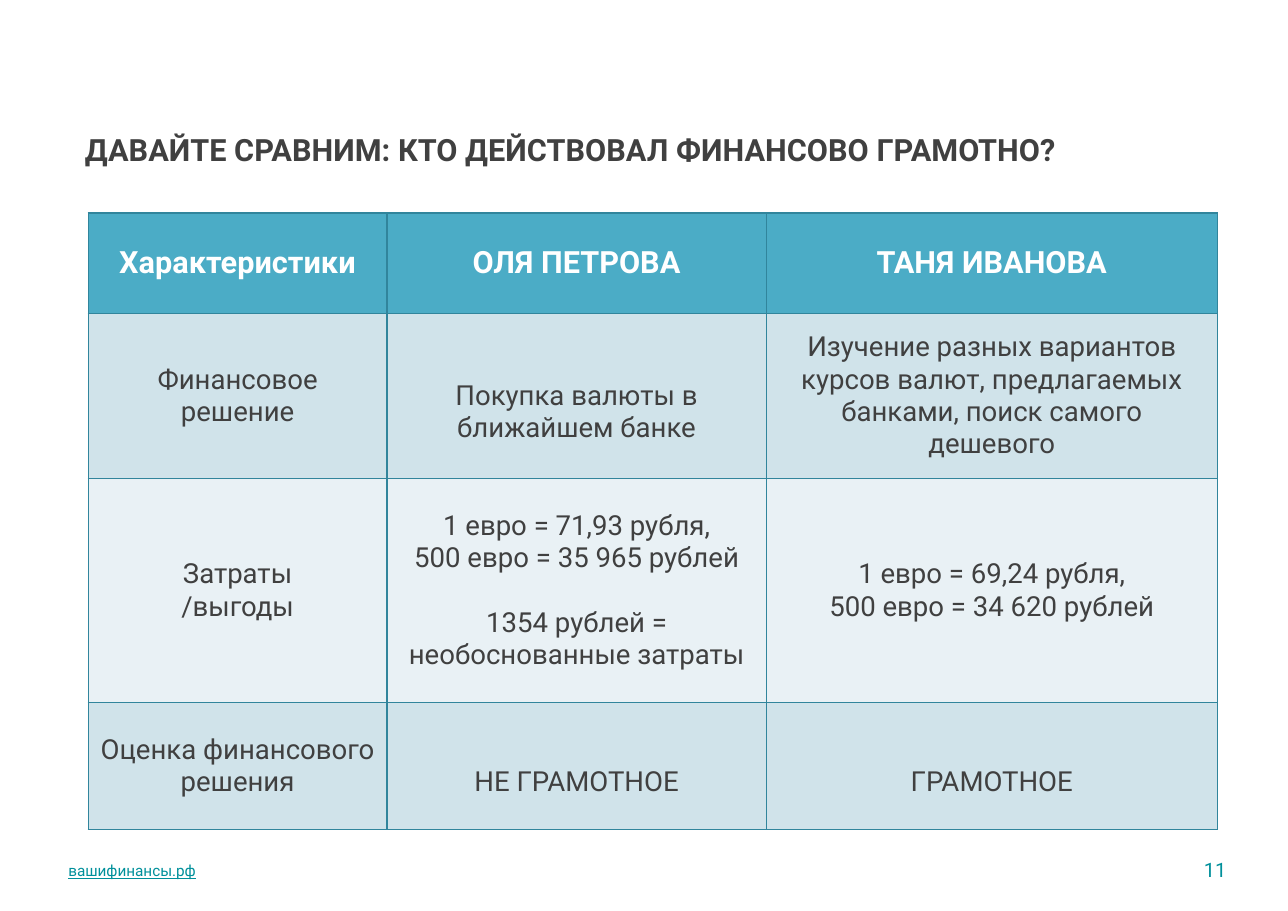
from lxml import etree
from pptx import Presentation
from pptx import util as u
from pptx.dml.color import RGBColor
from pptx.enum import text as t
from pptx.oxml.ns import qn

WIDE, HIGH = u.Inches(11.68), u.Inches(8.26)
FONT = "Roboto"
HUES = {"ink": "404040", "teal": "00909B", "edge": "31859C", "head": "4BACC6",
        "dark": "D0E3EA", "light": "E9F1F5", "white": "FFFFFF"}

# Table grid in percent of the slide's width and height
COLS = [23.2, 29.45, 35.02]
ROWS = [11.02, 18.16, 24.58, 13.92]
CELLS = [
    ["Характеристики", "ОЛЯ ПЕТРОВА", "ТАНЯ ИВАНОВА"],
    ["Финансовое решение", "Покупка валюты в ближайшем банке",
     "Изучение разных вариантов курсов валют, предлагаемых банками, "
     "поиск самого дешевого"],
    ["Затраты\n/выгоды",
     "1 евро = 71,93 рубля,\n500 евро = 35 965 рублей\n"
     "1354 рублей = необоснованные затраты",
     "1 евро = 69,24 рубля,\n500 евро = 34 620 рублей"],
    ["Оценка финансового решения", "НЕ ГРАМОТНОЕ", "ГРАМОТНОЕ"],
]
LOWER = {(1, 1), (3, 1), (3, 2)}  # cells whose text sits half a line lower
LINE = u.Pt(21)


def hue(name):
    return RGBColor.from_string(HUES[name])


def across(part):
    return round(WIDE * part / 100)


def down(part):
    return round(HIGH * part / 100)


def area(x, y, w, h):
    return across(x), down(y), across(w), down(h)


def style(para, size, color, align, bold=False, under=None):
    para.alignment = align
    font = para.font
    font.name, font.size, font.bold, font.underline = FONT, u.Pt(size), bold, under
    font.color.rgb = hue(color)


def inset(frame, anchor):
    frame.vertical_anchor = anchor
    frame.margin_left = frame.margin_right = u.Inches(0.05)
    frame.margin_top = frame.margin_bottom = u.Inches(0.05)


def add_title(slide, words):
    title = slide.shapes.title
    title.left, title.top, title.width, title.height = area(6.16, 13.8, 88.87, 12.59)
    frame = title.text_frame
    inset(frame, t.MSO_ANCHOR.TOP)
    frame.auto_size = t.MSO_AUTO_SIZE.NONE
    frame.text = words
    style(frame.paragraphs[0], 20, "ink", t.PP_ALIGN.LEFT, bold=True)


def add_note(slide, words, place, size, align, wrap=True, under=None):
    frame = slide.shapes.add_textbox(*area(*place)).text_frame
    inset(frame, t.MSO_ANCHOR.MIDDLE)
    frame.word_wrap = wrap
    frame.auto_size = t.MSO_AUTO_SIZE.SHAPE_TO_FIT_TEXT
    frame.text = words
    style(frame.paragraphs[0], size, "teal", align, under=under)


def add_edges(cell):
    props = cell._tc.get_or_add_tcPr()
    for spot, side in enumerate(("lnL", "lnR", "lnT", "lnB")):
        line = etree.Element(qn("a:" + side), w=str(u.Pt(1)))
        fill = etree.SubElement(line, qn("a:solidFill"))
        etree.SubElement(fill, qn("a:srgbClr"), val=HUES["edge"])
        props.insert(spot, line)


def fill_cell(cell, words, row, col):
    head = row == 0
    cell.text = words
    cell.vertical_anchor = t.MSO_ANCHOR.MIDDLE
    cell.fill.solid()
    cell.fill.fore_color.rgb = hue("head" if head else "dark" if row % 2 else "light")
    if (row, col) in LOWER:
        cell.margin_top = u.Inches(0.05) + LINE
    paras = cell.text_frame.paragraphs
    for para in paras:
        style(para, 20 if head else 18, "white" if head else "ink",
              t.PP_ALIGN.CENTER, bold=head)
    if len(paras) > 2:
        paras[2].space_before = LINE
    add_edges(cell)


def add_grid(slide):
    place = area(6.85, 23.37, sum(COLS), sum(ROWS))
    table = slide.shapes.add_table(len(ROWS), len(COLS), *place).table
    for col, part in zip(table.columns, COLS):
        col.width = across(part)
    for row, part in zip(table.rows, ROWS):
        row.height = down(part)
    for row, line in enumerate(CELLS):
        for col, words in enumerate(line):
            fill_cell(table.cell(row, col), words, row, col)


def main():
    deck = Presentation()
    deck.slide_width, deck.slide_height = WIDE, HIGH
    slide = deck.slides.add_slide(deck.slide_layouts[5])
    # Title and comparison
    add_title(slide, "ДАВАЙТЕ СРАВНИМ: КТО ДЕЙСТВОВАЛ ФИНАНСОВО ГРАМОТНО?")
    add_grid(slide)
    # Footer: site and page number
    add_note(slide, "вашифинансы.рф", (4.88, 93.83, 33.99, 3.39), 10,
             t.PP_ALIGN.LEFT, under=True)
    add_note(slide, "11", (92.89, 93.46, 2.74, 4), 13, t.PP_ALIGN.RIGHT, wrap=False)
    deck.save("out.pptx")


if __name__ == "__main__":
    main()
